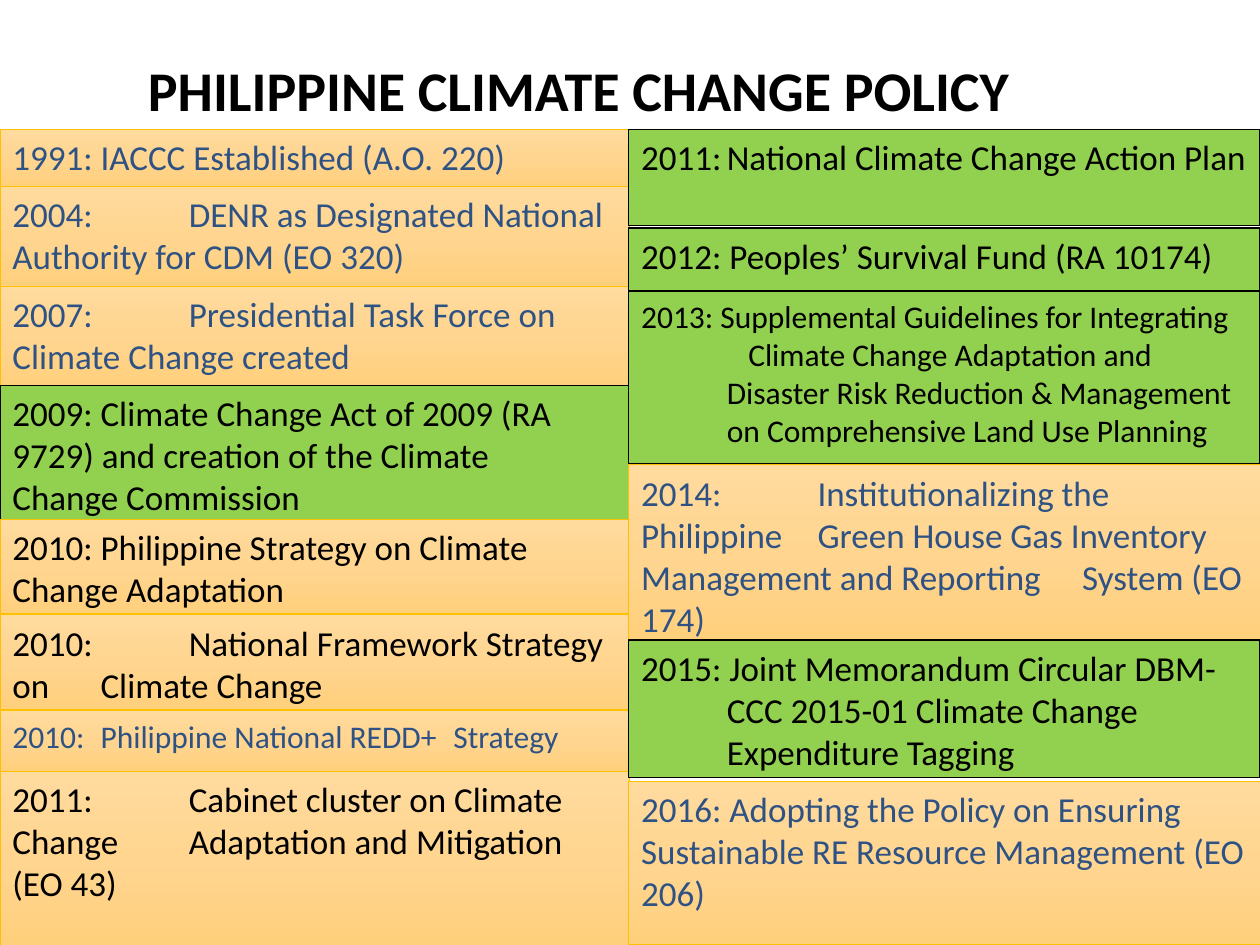
from copy import deepcopy
from dataclasses import dataclass

from lxml import etree
from pptx import Presentation
from pptx.dml.color import RGBColor
from pptx.enum.shapes import MSO_SHAPE
from pptx.enum.text import MSO_ANCHOR, PP_ALIGN
from pptx.oxml.ns import qn
from pptx.util import Inches, Pt

RECTANGLE = MSO_SHAPE.RECTANGLE
TOP, MIDDLE = MSO_ANCHOR.TOP, MSO_ANCHOR.MIDDLE
LEFT, CENTER = PP_ALIGN.LEFT, PP_ALIGN.CENTER


@dataclass(frozen=True)
class Theme:
    font: str = "Calibri"
    black: str = "000000"
    blue: str = "2E5284"
    green: str = "92D050"
    amber_line: str = "FFC000"
    amber: tuple = ((0, "FFDB9E"), (0.5, "FFD590"), (1, "FFD07C"))
    title_size: int = 32
    body_size: int = 20
    small_size: int = 18


@dataclass(frozen=True)
class Entry:
    top: float
    height: float
    lines: tuple
    green: bool = False
    color: str = Theme.black
    size: int = Theme.body_size
    hanging: bool = False


THEME = Theme()
TAB_STEP, TAB_COUNT = 0.7, 6
HANG, EXTRA_INDENT = 0.68, 0.17

LEFT_ENTRIES = (
    Entry(1.03, 0.45, ("1991:\tIACCC Established (A.O. 220)",), color=THEME.blue),
    Entry(1.48, 0.8, ("2004: \tDENR as Designated National \tAuthority for CDM (EO 320)",),
          color=THEME.blue),
    Entry(2.27, 0.79, ("2007: \tPresidential Task Force on \tClimate Change created",),
          color=THEME.blue),
    Entry(3.06, 1.07,
          ("2009: Climate Change Act of 2009 (RA \t9729) and creation of the Climate "
           "\tChange Commission",), green=True),
    Entry(4.12, 0.75, ("2010:\tPhilippine Strategy on Climate \tChange Adaptation",)),
    Entry(4.88, 0.75, ("2010: \tNational Framework Strategy on \tClimate Change",)),
    Entry(5.64, 0.48, ("2010: \tPhilippine National REDD+ \tStrategy",),
          color=THEME.blue, size=THEME.small_size),
    Entry(6.12, 1.38,
          ("2011: \tCabinet cluster on Climate Change \tAdaptation and Mitigation (EO 43)",)),
)

RIGHT_ENTRIES = (
    Entry(1.03, 0.76, ("2011:\tNational Climate Change Action Plan",),
          green=True, hanging=True),
    Entry(1.81, 0.5, ("2012:\tPeoples’ Survival Fund (RA 10174)",), green=True),
    Entry(2.31, 1.37,
          ("2013: Supplemental Guidelines for Integrating",
           "Climate Change Adaptation and Disaster Risk Reduction & Management "
           "on Comprehensive Land Use Planning"),
          green=True, size=THEME.small_size, hanging=True),
    Entry(3.69, 1.4,
          ("2014: \tInstitutionalizing the Philippine \tGreen House Gas Inventory "
           "\tManagement and Reporting\tSystem (EO 174)",), color=THEME.blue),
    Entry(5.08, 1.09,
          ("2015: Joint Memorandum Circular DBM-CCC 2015-01 Climate Change "
           "Expenditure Tagging",), green=True, hanging=True),
    Entry(6.2, 1.3,
          ("2016: Adopting the Policy on Ensuring Sustainable RE Resource "
           "Management (EO 206)",), color=THEME.blue),
)


def set_all(target, values):
    for name, value in values.items():
        setattr(target, name, value)


def write_span(para, text, color, size, bold=False):
    span = para.add_run()
    span.text = text
    set_all(span.font, {"name": THEME.font, "size": Pt(size), "bold": bold})
    span.font.color.rgb = RGBColor.from_string(color)


def add_tab_stops(para):
    tabs = etree.SubElement(para._p.get_or_add_pPr(), qn("a:tabLst"))
    for number in range(1, TAB_COUNT + 1):
        position = Inches(round(number * TAB_STEP, 2))
        etree.SubElement(tabs, qn("a:tab"), pos=str(position), algn="l")


def set_hanging(para, first):
    indent = -HANG if first else EXTRA_INDENT
    properties = para._p.get_or_add_pPr()
    properties.set("marL", str(Inches(HANG)))
    properties.set("indent", str(Inches(indent)))


def fill_amber(shape):
    shape.fill.gradient()
    shape.fill.gradient_angle = 270
    first = shape._element.spPr.find(".//" + qn("a:gs"))
    first.addnext(deepcopy(first))
    for stop, (position, color) in zip(shape.fill.gradient_stops, THEME.amber):
        stop.position = position
        stop.color.rgb = RGBColor.from_string(color)


def add_entry(page, entry, left, width):
    shape = page.shapes.add_shape(RECTANGLE, Inches(left), Inches(entry.top),
                                  Inches(width), Inches(entry.height))
    shape.shadow.inherit = False
    if entry.green:
        shape.fill.solid()
        shape.fill.fore_color.rgb = RGBColor.from_string(THEME.green)
    else:
        fill_amber(shape)
    line_color = THEME.black if entry.green else THEME.amber_line
    shape.line.color.rgb = RGBColor.from_string(line_color)
    shape.line.width = Pt(0.75 if entry.green else 0.5)
    frame = shape.text_frame
    set_all(frame, {"word_wrap": True, "vertical_anchor": TOP})
    for index, text in enumerate(entry.lines):
        para = frame.add_paragraph() if index else frame.paragraphs[0]
        para.alignment = LEFT
        if entry.hanging:
            set_hanging(para, index == 0)
        elif "\t" in text:
            add_tab_stops(para)
        write_span(para, text, entry.color, entry.size)


def add_column(page, entries, left, width):
    for entry in entries:
        add_entry(page, entry, left, width)


def add_title(page, left, top, width, height):
    title = page.shapes.title
    set_all(title, {"left": Inches(left), "top": Inches(top),
                    "width": Inches(width), "height": Inches(height)})
    title.text_frame.vertical_anchor = MIDDLE
    para = title.text_frame.paragraphs[0]
    set_all(para, {"alignment": CENTER, "line_spacing": 0.9})
    write_span(para, "PHILIPPINE CLIMATE CHANGE POLICY", THEME.black,
               THEME.title_size, bold=True)


def main():
    deck = Presentation()
    set_all(deck, {"slide_width": Inches(10), "slide_height": Inches(7.5)})
    page = deck.slides.add_slide(deck.slide_layouts[0])
    subtitle = page.placeholders[1]._element
    subtitle.getparent().remove(subtitle)
    add_title(page, 0, 0.39, 9.19, 0.7)
    add_column(page, LEFT_ENTRIES, 0, 5)
    add_column(page, RIGHT_ENTRIES, 4.99, 5.01)
    deck.save("out.pptx")


if __name__ == "__main__":
    main()
